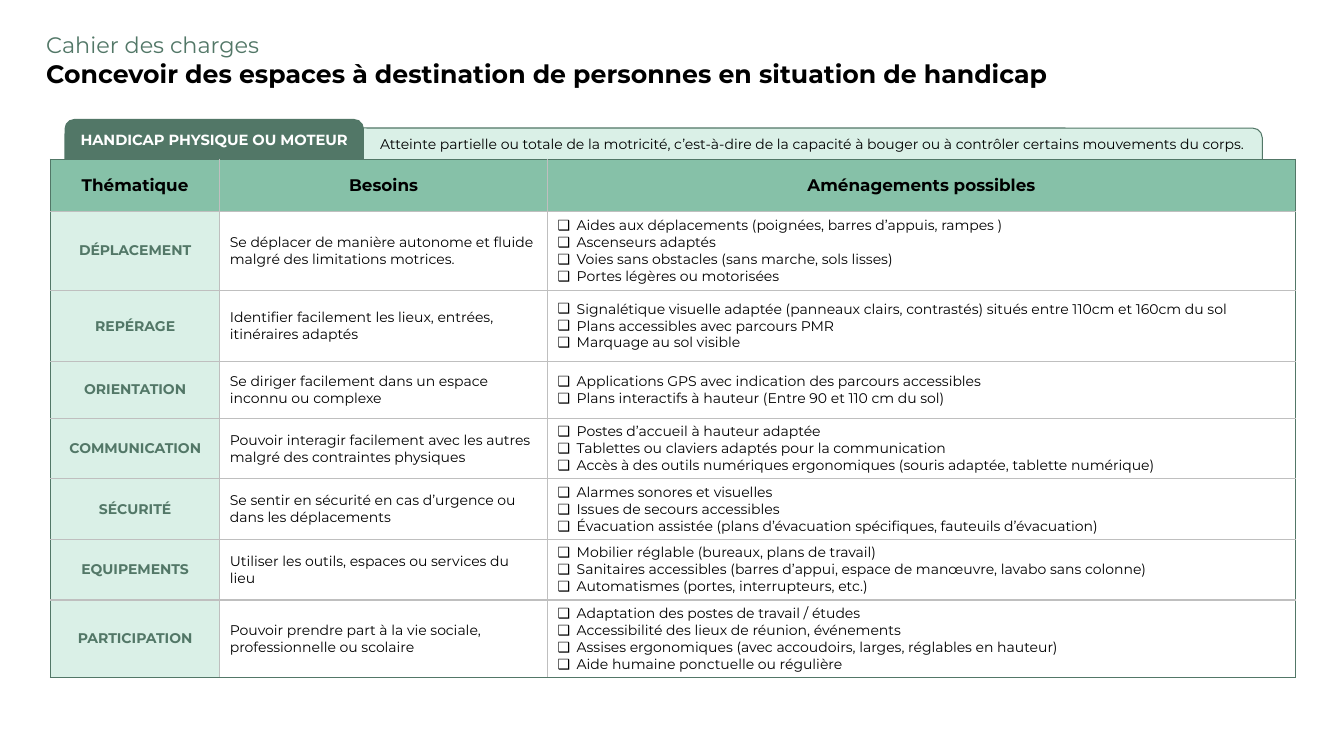
from lxml.etree import SubElement
from pptx import Presentation
from pptx.dml.color import RGBColor
from pptx.enum.shapes import MSO_SHAPE
from pptx.enum.text import MSO_ANCHOR, MSO_AUTO_SIZE, PP_ALIGN
from pptx.oxml.ns import qn
from pptx.util import Inches, Pt

FONT = "Montserrat"
COLORS = {
    "dark": "527767",
    "medium": "86C1A8",
    "pale": "DAF0E7",
    "grid": "BFBFBF",
    "black": "000000",
    "white": "FFFFFF",
}
HEADINGS = ["Thématique", "Besoins", "Aménagements possibles"]
COLUMN_WIDTHS = [1.68, 3.25, 7.42]
ROW_HEIGHTS = [0.52, 0.78, 0.71, 0.56, 0.6, 0.6, 0.6, 0.77]
THEMES = [
    ("DÉPLACEMENT",
     "Se déplacer de manière autonome et fluide malgré des limitations motrices.",
     ["Aides aux déplacements (poignées, barres d’appuis, rampes )",
      "Ascenseurs adaptés",
      "Voies sans obstacles (sans marche, sols lisses)",
      "Portes légères ou motorisées"]),
    ("REPÉRAGE",
     "Identifier facilement les lieux, entrées, itinéraires adaptés",
     ["Signalétique visuelle adaptée (panneaux clairs, contrastés) situés entre 110cm et 160cm du sol",
      "Plans accessibles avec parcours PMR",
      "Marquage au sol visible"]),
    ("ORIENTATION",
     "Se diriger facilement dans un espace inconnu ou complexe",
     ["Applications GPS avec indication des parcours accessibles",
      "Plans interactifs à hauteur (Entre 90 et 110 cm du sol)"]),
    ("COMMUNICATION",
     "Pouvoir interagir facilement avec les autres malgré des contraintes physiques",
     ["Postes d’accueil à hauteur adaptée",
      "Tablettes ou claviers adaptés pour la communication",
      "Accès à des outils numériques ergonomiques (souris adaptée, tablette numérique)"]),
    ("SÉCURITÉ",
     "Se sentir en sécurité en cas d’urgence ou dans les déplacements",
     ["Alarmes sonores et visuelles",
      "Issues de secours accessibles",
      "Évacuation assistée (plans d’évacuation spécifiques, fauteuils d’évacuation)"]),
    ("EQUIPEMENTS",
     "Utiliser les outils, espaces ou services du lieu",
     ["Mobilier réglable (bureaux, plans de travail)",
      "Sanitaires accessibles (barres d’appui, espace de manœuvre, lavabo sans colonne)",
      "Automatismes (portes, interrupteurs, etc.)"]),
    ("PARTICIPATION",
     "Pouvoir prendre part à la vie sociale, professionnelle ou scolaire",
     ["Adaptation des postes de travail / études",
      "Accessibilité des lieux de réunion, événements",
      "Assises ergonomiques (avec accoudoirs, larges, réglables en hauteur)",
      "Aide humaine ponctuelle ou régulière"]),
]


def rgb(color):
    """Return the named palette colour."""
    return RGBColor.from_string(COLORS[color])


def write(paragraph, text, size, color="black", bold=False, align=PP_ALIGN.LEFT):
    """Fill a paragraph with text in one style."""
    paragraph.text = text
    paragraph.alignment = align
    paragraph.font.name = FONT
    paragraph.font.size = Pt(size)
    paragraph.font.bold = bold
    paragraph.font.color.rgb = rgb(color)


def add_title(slide):
    """Add the two-line slide title."""
    frame = slide.shapes.add_textbox(
        Inches(0.36), Inches(0.26), Inches(10.23), Inches(0.67)).text_frame
    frame.word_wrap = False
    frame.auto_size = MSO_AUTO_SIZE.SHAPE_TO_FIT_TEXT
    write(frame.paragraphs[0], "Cahier des charges", 16, "dark")
    write(frame.add_paragraph(),
          "Concevoir des espaces à destination de personnes en situation de handicap",
          18, bold=True)


def add_tab(slide, left, top, width, fill, outline=None):
    """Add a rounded tab that the table partly covers, and return its text frame."""
    tab = slide.shapes.add_shape(
        MSO_SHAPE.ROUNDED_RECTANGLE,
        Inches(left), Inches(top), Inches(width), Inches(0.59))
    tab.shadow.inherit = False
    tab.fill.solid()
    tab.fill.fore_color.rgb = rgb(fill)
    if outline:
        tab.line.color.rgb = rgb(outline)
        tab.line.width = Pt(0.75)
    else:
        tab.line.fill.background()
    tab.text_frame.word_wrap = True
    return tab.text_frame


def add_tabs(slide):
    """Add the definition band and the category tab in front of it."""
    definition = add_tab(slide, 3.47, 1.27, 9.05, "pale", "dark")
    definition.vertical_anchor = MSO_ANCHOR.TOP
    definition.margin_left = Inches(0.27)
    definition.margin_right = 0
    write(definition.paragraphs[0],
          "Atteinte partielle ou totale de la motricité, c’est-à-dire de la capacité "
          "à bouger ou à contrôler certains mouvements du corps.", 10)
    category = add_tab(slide, 0.64, 1.18, 2.97, "dark")
    category.vertical_anchor = MSO_ANCHOR.MIDDLE
    category.margin_left = category.margin_right = 0
    category.margin_bottom = Inches(0.22)
    write(category.paragraphs[0], "HANDICAP PHYSIQUE OU MOTEUR", 10.5, "white",
          True, PP_ALIGN.CENTER)


def add_checkbox(paragraph):
    """Give a paragraph a hanging checkbox bullet."""
    properties = paragraph._p.get_or_add_pPr()
    properties.set("marL", str(Inches(0.19)))
    properties.set("indent", str(-Inches(0.19)))
    bullet_font = properties.makeelement(qn("a:buFont"), {"typeface": FONT})
    bullet = properties.makeelement(qn("a:buChar"), {"char": "❑"})
    properties.insert(0, bullet_font)
    bullet_font.addnext(bullet)


def style_cell(cell, fill, outer_sides):
    """Set a cell's borders, fill and anchor; outer sides are dark."""
    properties = cell._tc.get_or_add_tcPr()
    for side in "LRTB":
        border = SubElement(properties, qn(f"a:ln{side}"), w=str(Pt(1)))
        color = COLORS["dark" if side in outer_sides else "grid"]
        SubElement(SubElement(border, qn("a:solidFill")), qn("a:srgbClr"), val=color)
    cell.fill.solid()
    cell.fill.fore_color.rgb = rgb(fill)
    cell.vertical_anchor = MSO_ANCHOR.MIDDLE


def add_requirements(slide):
    """Add the table of themes, needs and possible fittings."""
    table = slide.shapes.add_table(
        len(ROW_HEIGHTS), len(COLUMN_WIDTHS), Inches(0.5), Inches(1.58),
        Inches(sum(COLUMN_WIDTHS)), Inches(sum(ROW_HEIGHTS))).table
    table.first_row = table.horz_banding = False
    for column, width in zip(table.columns, COLUMN_WIDTHS):
        column.width = Inches(width)
    last_row, last_column = len(ROW_HEIGHTS) - 1, len(COLUMN_WIDTHS) - 1
    for r, height in enumerate(ROW_HEIGHTS):
        table.rows[r].height = Inches(height)
        for c in range(len(COLUMN_WIDTHS)):
            edges = {"L": c == 0, "R": c == last_column, "T": r == 0, "B": r == last_row}
            fill = "medium" if r == 0 else "pale" if c == 0 else "white"
            style_cell(table.cell(r, c), fill, [side for side in edges if edges[side]])
    for c, heading in enumerate(HEADINGS):
        write(table.cell(0, c).text_frame.paragraphs[0], heading, 12,
              bold=True, align=PP_ALIGN.CENTER)
    for r, (theme, need, fittings) in enumerate(THEMES, start=1):
        theme_frame, need_frame, fitting_frame = (
            table.cell(r, c).text_frame for c in range(3))
        write(theme_frame.paragraphs[0], theme, 10, "dark", True, PP_ALIGN.CENTER)
        write(need_frame.paragraphs[0], need, 10)
        for i, fitting in enumerate(fittings):
            line = fitting_frame.add_paragraph() if i else fitting_frame.paragraphs[0]
            write(line, fitting, 10)
            add_checkbox(line)


def main():
    """Build and save the slide."""
    presentation = Presentation()
    presentation.slide_width = Inches(13.33)
    presentation.slide_height = Inches(7.5)
    slide = presentation.slides.add_slide(presentation.slide_layouts[6])
    add_tabs(slide)
    add_title(slide)
    add_requirements(slide)
    presentation.save("out.pptx")


if __name__ == "__main__":
    main()
